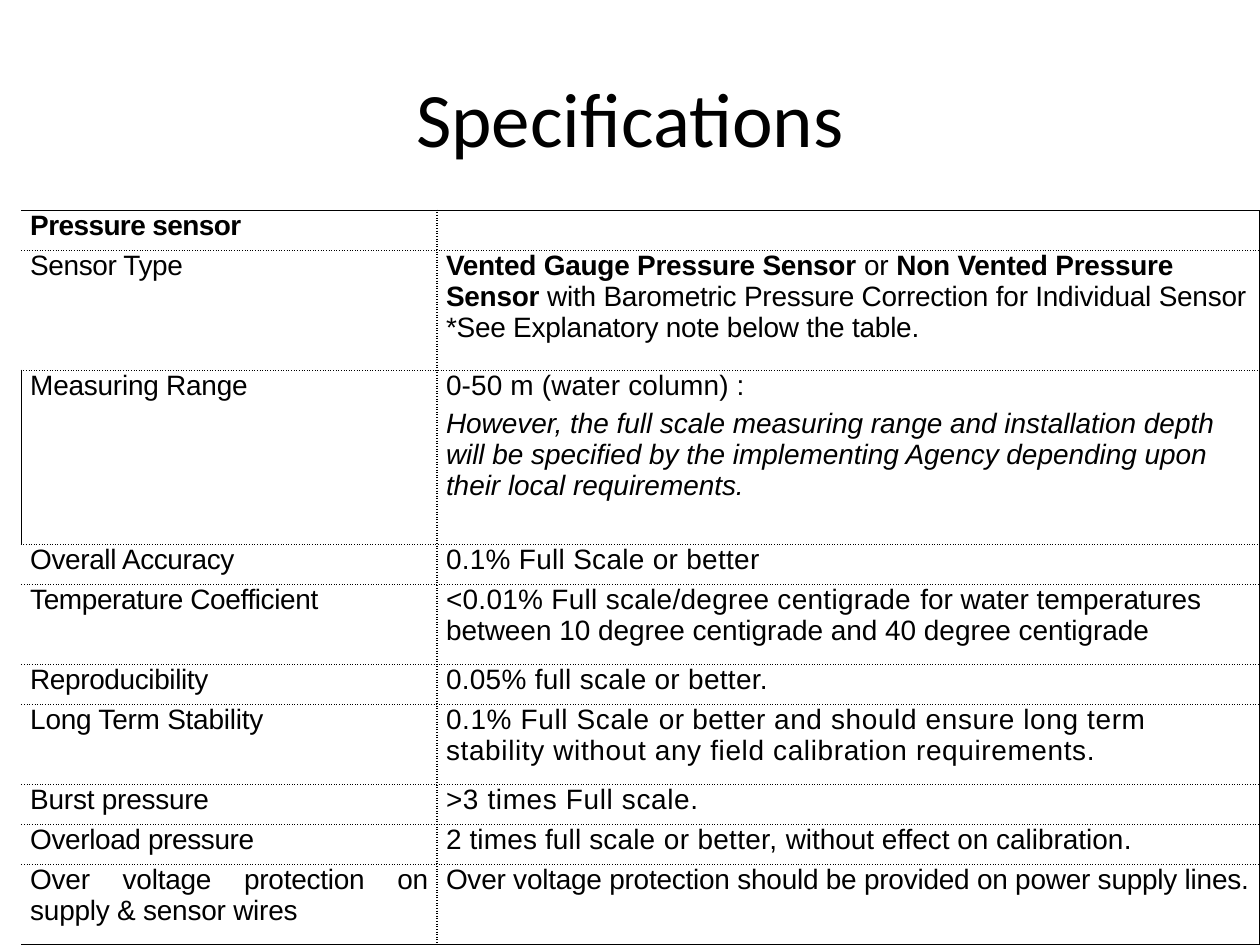
from dataclasses import dataclass
from typing import Optional

from lxml import etree
from pptx import Presentation
from pptx.dml.color import RGBColor
from pptx.enum.text import MSO_ANCHOR, PP_ALIGN
from pptx.oxml.ns import qn
from pptx.util import Inches, Pt

CENTER, LEFT, JUSTIFY = PP_ALIGN.CENTER, PP_ALIGN.LEFT, PP_ALIGN.JUSTIFY
MIDDLE, TOP = MSO_ANCHOR.MIDDLE, MSO_ANCHOR.TOP
SOLID, DOTTED = "solid", "sysDot"


@dataclass(frozen=True)
class Theme:
    ink: str = "000000"
    title_font: str = "Calibri"
    title_size: int = 44
    body_font: str = "Arial"
    body_size: int = 16
    space_after: int = 4
    border_width: int = 1


@dataclass(frozen=True)
class Span:
    text: str
    spacing: float = 0  # points between letters
    bold: bool = False
    italic: bool = False


@dataclass(frozen=True)
class SpecRow:
    label: Span
    paragraphs: tuple[tuple[Span, ...], ...]
    lines: float = 1  # share of the table height
    label_align: PP_ALIGN = LEFT
    left_border: Optional[str] = None


THEME = Theme()
TABLE_LEFT, TABLE_TOP, TABLE_HEIGHT = 0.17, 1.67, 5.83
COLUMN_WIDTHS = (3.3, 6.53)
CELL_FORMAT = {
    "margin_left": Inches(0.07), "margin_right": Inches(0.07),
    "margin_top": 0, "margin_bottom": 0, "vertical_anchor": TOP,
}

ROWS = (
    SpecRow(Span("Pressure sensor", -0.3, bold=True), ()),
    SpecRow(Span("Sensor Type", -0.2), ((
        Span("Vented Gauge Pressure Sensor", -0.1, bold=True),
        Span(" or ", -0.1),
        Span("Non Vented Pressure Sensor", -0.1, bold=True),
        Span(" with Barometric Pressure Correction for Individual Sensor "
             "*See Explanatory note below the table.", -0.1)),), lines=3),
    SpecRow(Span("Measuring Range", -0.1), (
        (Span("0-50 m (water column) :", 0.1),),
        (Span("However, the full scale measuring range and installation depth "
              "will be specified by the implementing Agency depending upon "
              "their local requirements.", italic=True),)),
        lines=4.35, left_border=SOLID),
    SpecRow(Span("Overall Accuracy", -0.2), ((Span("0.1% Full Scale or better", 0.2),),)),
    SpecRow(Span("Temperature Coefficient", -0.2), ((
        Span("<0.01% Full scale/degree centigrade ", 0.2),
        Span("for water temperatures between 10 degree centigrade "
             "and 40 degree centigrade")),), lines=2),
    SpecRow(Span("Reproducibility", -0.2), ((Span("0.05% full scale or better.", 0.2),),)),
    SpecRow(Span("Long Term Stability", -0.1), ((
        Span("0.1% Full Scale ", 0.4),
        Span("or better ", 0.2),
        Span("and should ensure long term stability without any field "
             "calibration requirements.", 0.4)),), lines=2),
    SpecRow(Span("Burst pressure", -0.1), ((Span(">3 times Full scale.", 0.4),),)),
    SpecRow(Span("Overload pressure", -0.2), ((
        Span("2 times full scale ", 0.1),
        Span("or better, ", 0.2),
        Span("without effect on calibration"),
        Span(".", 0.1)),)),
    SpecRow(Span("Over voltage protection on supply & sensor wires", -0.1), ((
        Span("Over voltage protection should be provided on power supply lines.", -0.1),),),
        lines=2, label_align=JUSTIFY),
)


def apply_format(target, values: dict) -> None:
    for name, value in values.items():
        setattr(target, name, value)


def add_span(para, span: Span, font: str, size: int) -> None:
    run = para.add_run()
    run.text = span.text
    apply_format(run.font, {"name": font, "size": Pt(size),
                            "bold": span.bold, "italic": span.italic})
    run.font.color.rgb = RGBColor.from_string(THEME.ink)
    if span.spacing:
        run.font._element.set("spc", str(round(span.spacing * 100)))


def set_borders(cell, left: Optional[str], right: str, top: str, bottom: str) -> None:
    """Cell borders go ahead of the fill, in the order left, right, top, bottom."""
    properties = cell._tc.get_or_add_tcPr()
    sides = {"a:lnL": left, "a:lnR": right, "a:lnT": top, "a:lnB": bottom}
    for position, (tag, dash) in enumerate(sides.items()):
        line = etree.Element(qn(tag), w=str(Pt(THEME.border_width)))
        if dash:
            fill = etree.SubElement(line, qn("a:solidFill"))
            etree.SubElement(fill, qn("a:srgbClr"), val=THEME.ink)
            etree.SubElement(line, qn("a:prstDash"), val=dash)
        else:
            etree.SubElement(line, qn("a:noFill"))
        properties.insert(position, line)


def fill_cell(cell, paragraphs: tuple[tuple[Span, ...], ...], align: PP_ALIGN) -> None:
    apply_format(cell, CELL_FORMAT)
    cell.fill.background()
    frame = cell.text_frame
    for index, spans in enumerate(paragraphs):
        para = frame.add_paragraph() if index else frame.paragraphs[0]
        apply_format(para, {"alignment": align, "space_after": Pt(THEME.space_after)})
        for span in spans:
            add_span(para, span, THEME.body_font, THEME.body_size)


def add_title(page, text: str) -> None:
    title = page.shapes.title
    apply_format(title, {"left": Inches(0.5), "top": Inches(0.3),
                         "width": Inches(9), "height": Inches(1.25)})
    title.text_frame.vertical_anchor = MIDDLE
    para = title.text_frame.paragraphs[0]
    para.alignment = CENTER
    add_span(para, Span(text), THEME.title_font, THEME.title_size)


def add_spec_table(page, rows: tuple[SpecRow, ...]) -> None:
    table = page.shapes.add_table(
        len(rows), len(COLUMN_WIDTHS), Inches(TABLE_LEFT), Inches(TABLE_TOP),
        Inches(sum(COLUMN_WIDTHS)), Inches(TABLE_HEIGHT)).table
    apply_format(table, {"first_row": False, "horz_banding": False})
    for column, width in zip(table.columns, COLUMN_WIDTHS):
        column.width = Inches(width)

    line_height = TABLE_HEIGHT / sum(row.lines for row in rows)
    last = len(rows) - 1
    for index, row in enumerate(rows):
        table.rows[index].height = Inches(row.lines * line_height)
        label, value = table.cell(index, 0), table.cell(index, 1)
        fill_cell(label, ((row.label,),), row.label_align)
        fill_cell(value, row.paragraphs, LEFT)
        # Solid outer edges, dotted lines inside
        top = DOTTED if index else SOLID
        bottom = SOLID if index == last else DOTTED
        set_borders(label, row.left_border, DOTTED, top, bottom)
        set_borders(value, DOTTED, SOLID, top, bottom)


def main() -> None:
    deck = Presentation()
    apply_format(deck, {"slide_width": Inches(10), "slide_height": Inches(7.5)})
    page = deck.slides.add_slide(deck.slide_layouts[5])
    add_title(page, "Specifications")
    add_spec_table(page, ROWS)
    deck.save("out.pptx")


if __name__ == "__main__":
    main()
